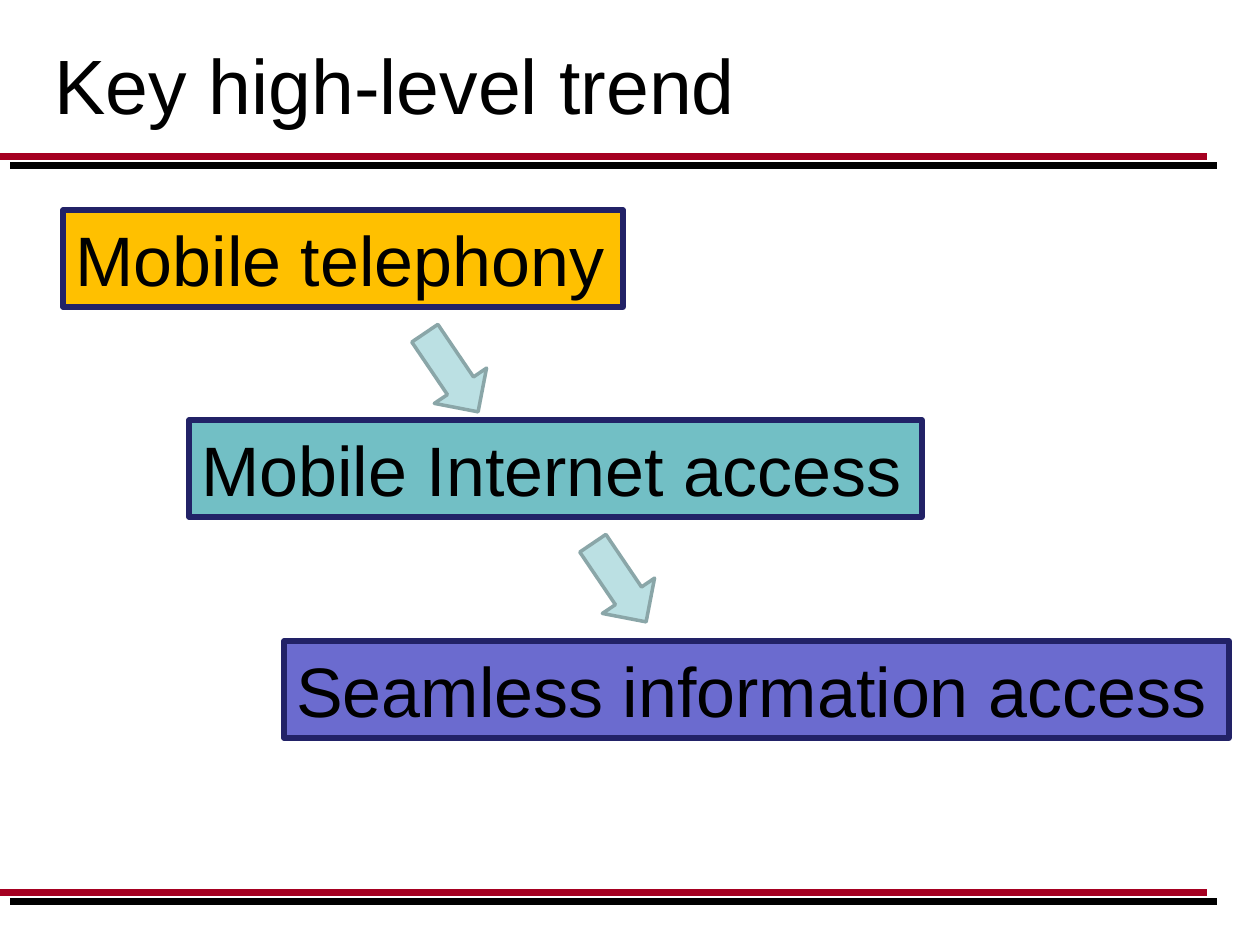
from dataclasses import dataclass

from lxml.etree import SubElement
from pptx import Presentation
from pptx.dml.color import RGBColor
from pptx.enum.shapes import MSO_CONNECTOR as Link, MSO_SHAPE as Kind
from pptx.enum.text import MSO_ANCHOR as Anchor, MSO_AUTO_SIZE as Fit, PP_ALIGN as Align
from pptx.oxml.ns import qn
from pptx.slide import Slide
from pptx.text.text import TextFrame
from pptx.util import Emu, Pt


@dataclass(frozen=True)
class Theme:
    font: str = "Arial"
    ink: str = "000000"
    rule: str = "A50021"
    edge: str = "222267"
    arrow: str = "BBE0E3"
    rim: str = "8AA6A8"
    head: int = 44
    body: int = 40


@dataclass(frozen=True)
class Step:
    text: str
    left: int
    top: int
    width: int
    fill: str


@dataclass(frozen=True)
class Arrow:
    left: int
    top: int


THEME = Theme()
STEP_H = 97
ARROW_W, ARROW_H, ARROW_TURN = 63, 95, 325.9
RULE_END = 1207
RULES = (157, 893)
STEPS = (
    Step("Mobile telephony", 63, 210, 560, "FFC000"),
    Step("Mobile Internet access", 189, 420, 733, "72BFC5"),
    Step("Seamless information access", 284, 641, 945, "6B6BCF"),
)
ARROWS = (Arrow(420, 325), Arrow(588, 535))


def px(count: int) -> Emu:
    return Emu(count * 914400 // 126)


def rgb(code: str) -> RGBColor:
    return RGBColor.from_string(code)


def write(frame: TextFrame, text: str, size: int) -> None:
    frame.text = text
    para = frame.paragraphs[0]
    para.alignment = Align.LEFT
    para.font.name = THEME.font
    para.font.size = Pt(size)
    para.font.color.rgb = rgb(THEME.ink)


def add_title(slide: Slide, text: str) -> None:
    title = slide.shapes.title
    title.left, title.top = px(42), px(0)
    title.width, title.height = px(1155), px(168)
    title.text_frame.vertical_anchor = Anchor.MIDDLE
    write(title.text_frame, text, THEME.head)


def add_rule(slide: Slide, top: int) -> None:
    """Draw a full-width rule with a hard black shadow below it."""
    rule = slide.shapes.add_connector(Link.STRAIGHT, px(0), px(top), px(RULE_END), px(top))
    rule.line.color.rgb = rgb(THEME.rule)
    rule.line.width = Pt(4)
    effects = SubElement(rule._element.spPr, qn("a:effectLst"))
    shadow = SubElement(effects, qn("a:outerShdw"), blurRad="0", dist=str(Pt(7.8)),
                        dir=str(40 * 60000), algn="ctr", rotWithShape="0")
    SubElement(shadow, qn("a:srgbClr"), val=THEME.ink)


def add_block(slide: Slide, kind: Kind, box: tuple[int, int, int, int],
              fill: str, edge: str, weight: int):
    shape = slide.shapes.add_shape(kind, *map(px, box))
    shape.shadow.inherit = False
    shape.fill.solid()
    shape.fill.fore_color.rgb = rgb(fill)
    shape.line.color.rgb = rgb(edge)
    shape.line.width = Pt(weight)
    return shape


def add_step(slide: Slide, step: Step) -> None:
    box = (step.left, step.top, step.width, STEP_H)
    frame = add_block(slide, Kind.RECTANGLE, box, step.fill, THEME.edge, 3).text_frame
    frame.word_wrap = False
    frame.auto_size = Fit.SHAPE_TO_FIT_TEXT
    frame.vertical_anchor = Anchor.TOP
    write(frame, step.text, THEME.body)


def add_arrow(slide: Slide, arrow: Arrow) -> None:
    box = (arrow.left, arrow.top, ARROW_W, ARROW_H)
    shape = add_block(slide, Kind.DOWN_ARROW, box, THEME.arrow, THEME.rim, 2)
    shape.rotation = ARROW_TURN


def main() -> None:
    deck = Presentation()
    deck.slide_width, deck.slide_height = px(1260), px(945)
    slide = deck.slides.add_slide(deck.slide_layouts[5])
    add_title(slide, "Key high-level trend")
    for top in RULES:
        add_rule(slide, top)
    for step in STEPS:
        add_step(slide, step)
    for arrow in ARROWS:
        add_arrow(slide, arrow)
    deck.save("out.pptx")


if __name__ == "__main__":
    main()
